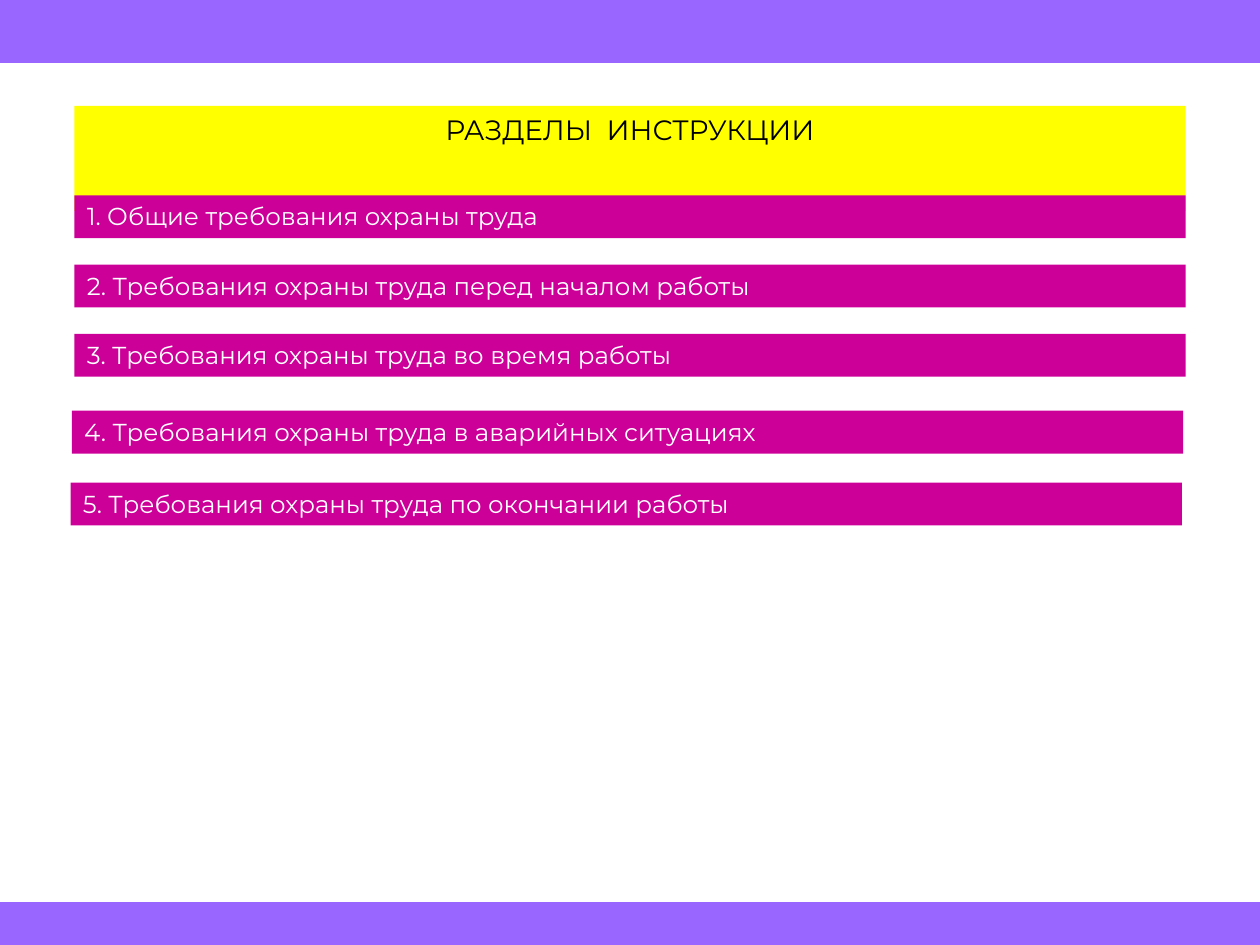
"""Build the slide listing the sections of a safety instruction."""
from dataclasses import dataclass

from pptx import Presentation
from pptx import util as u
from pptx.dml.color import RGBColor
from pptx.enum import shapes, text

COLORS = {
    "band": "9966FF",
    "title": "FFFF00",
    "section": "CC0099",
    "dark": "000000",
    "light": "FFFFFF",
}
FONT = "Montserrat"
BAR_WIDTH = 8.82


@dataclass
class Band:
    top: float
    height: float


@dataclass
class Section:
    left: float
    top: float
    label: str


BANDS = [Band(0, 0.5), Band(7.16, 0.34)]
SECTIONS = [
    Section(0.59, 1.55, "1. Общие требования охраны труда"),
    Section(0.59, 2.1, "2. Требования охраны труда перед началом работы"),
    Section(0.59, 2.65, "3. Требования охраны труда во время работы"),
    Section(0.57, 3.26, "4. Требования охраны труда в аварийных ситуациях"),
    Section(0.56, 3.83, "5. Требования охраны труда по окончании работы"),
]


def place(sp, left: float, top: float, width: float, height: float) -> None:
    """Move and size a shape, in inches."""
    sp.left, sp.top = u.Inches(left), u.Inches(top)
    sp.width, sp.height = u.Inches(width), u.Inches(height)


def paint(sp, color: str) -> None:
    """Fill a shape with a named colour."""
    sp.fill.solid()
    sp.fill.fore_color.rgb = RGBColor.from_string(COLORS[color])


def add_rect(s, left: float, top: float, width: float, height: float, color: str):
    """Add a plain filled rectangle."""
    sp = s.shapes.add_shape(
        shapes.MSO_SHAPE.RECTANGLE,
        u.Inches(left), u.Inches(top), u.Inches(width), u.Inches(height),
    )
    sp.shadow.inherit = False
    sp.line.fill.background()
    paint(sp, color)
    return sp


def write(sp, label: str, size: int, color: str, align: text.PP_ALIGN) -> None:
    """Write one line of text into a shape."""
    tf = sp.text_frame
    tf.word_wrap = True
    tf.auto_size = text.MSO_AUTO_SIZE.SHAPE_TO_FIT_TEXT
    tf.vertical_anchor = text.MSO_ANCHOR.TOP
    p = tf.paragraphs[0]
    p.alignment = align
    r = p.add_run()
    r.text = label
    r.font.name = FONT
    r.font.size = u.Pt(size)
    r.font.color.rgb = RGBColor.from_string(COLORS[color])


def add_title(s) -> None:
    """Format the title placeholder as a coloured bar."""
    sp = s.shapes.title
    place(sp, 0.59, 0.84, BAR_WIDTH, 0.37)
    paint(sp, "title")
    write(sp, "РАЗДЕЛЫ  ИНСТРУКЦИИ", 16, "dark", text.PP_ALIGN.CENTER)


def add_section(s, section: Section) -> None:
    """Add one section bar."""
    sp = add_rect(s, section.left, section.top, BAR_WIDTH, 0.34, "section")
    write(sp, section.label, 14, "light", text.PP_ALIGN.LEFT)


def main() -> None:
    """Build and save the slide."""
    prs = Presentation()
    prs.slide_width, prs.slide_height = u.Inches(10), u.Inches(7.5)
    s = prs.slides.add_slide(prs.slide_layouts.get_by_name("Title Only"))
    add_title(s)
    for band in BANDS:
        add_rect(s, 0, band.top, 10, band.height, "band")
    for section in SECTIONS:
        add_section(s, section)
    prs.save("out.pptx")


if __name__ == "__main__":
    main()
